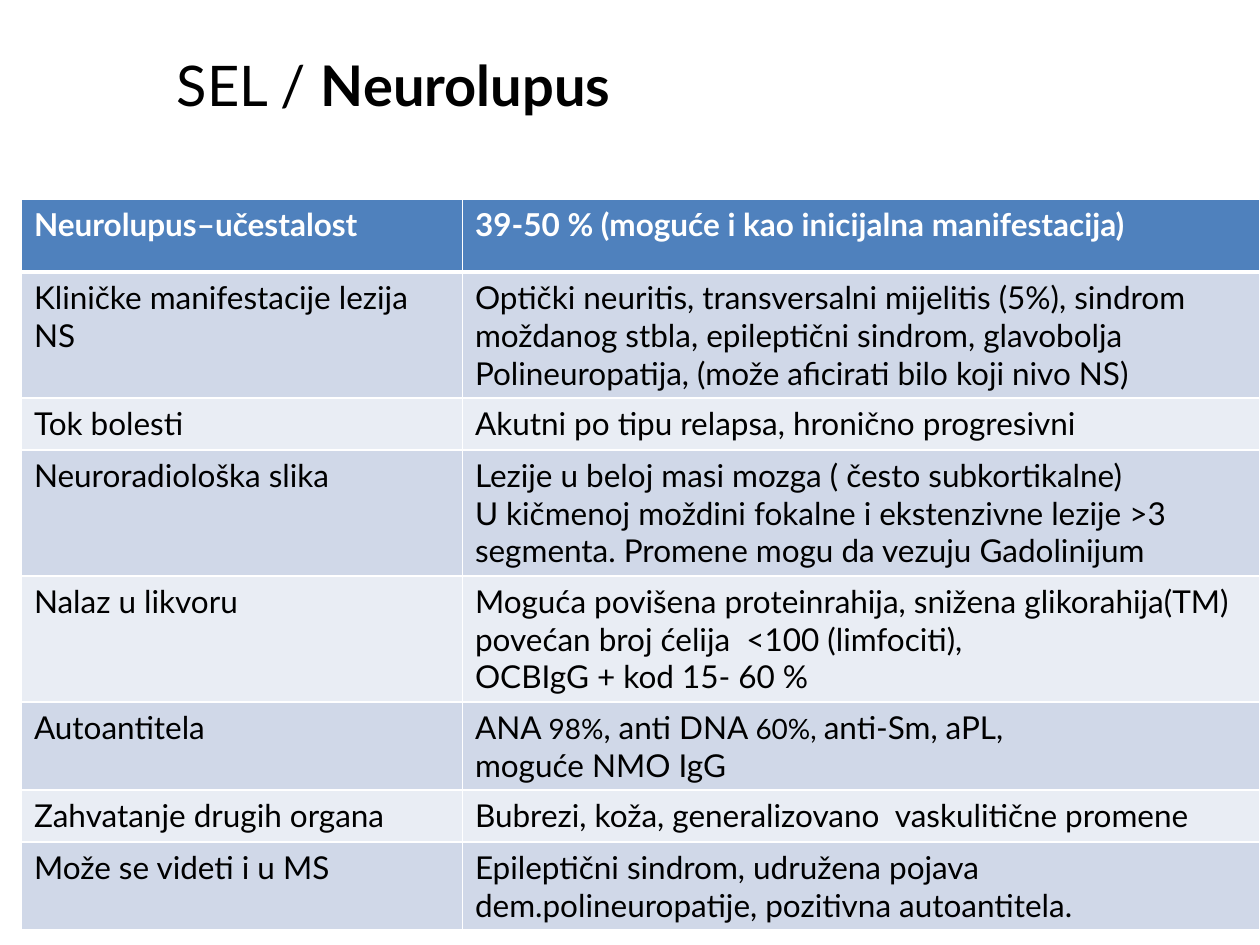
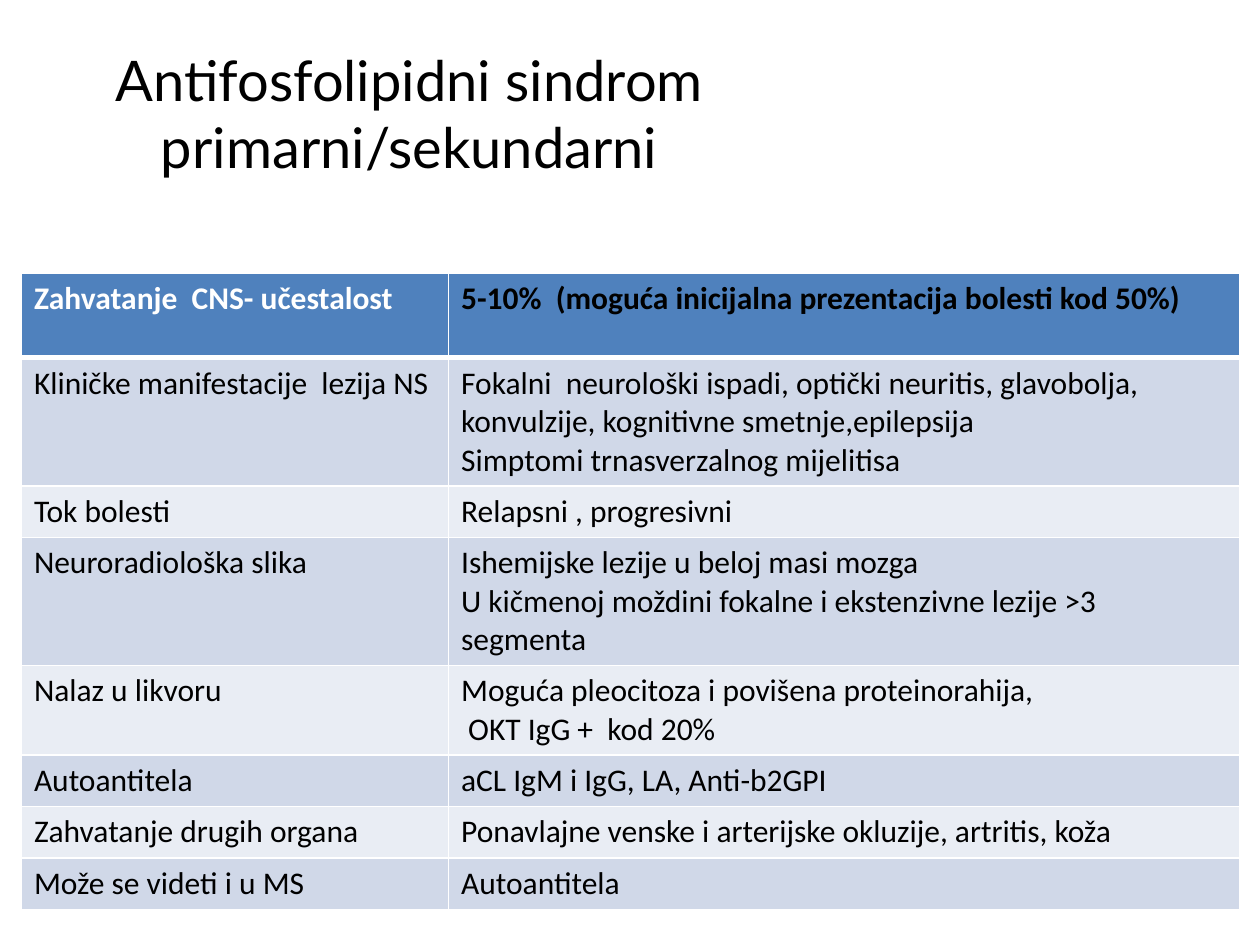
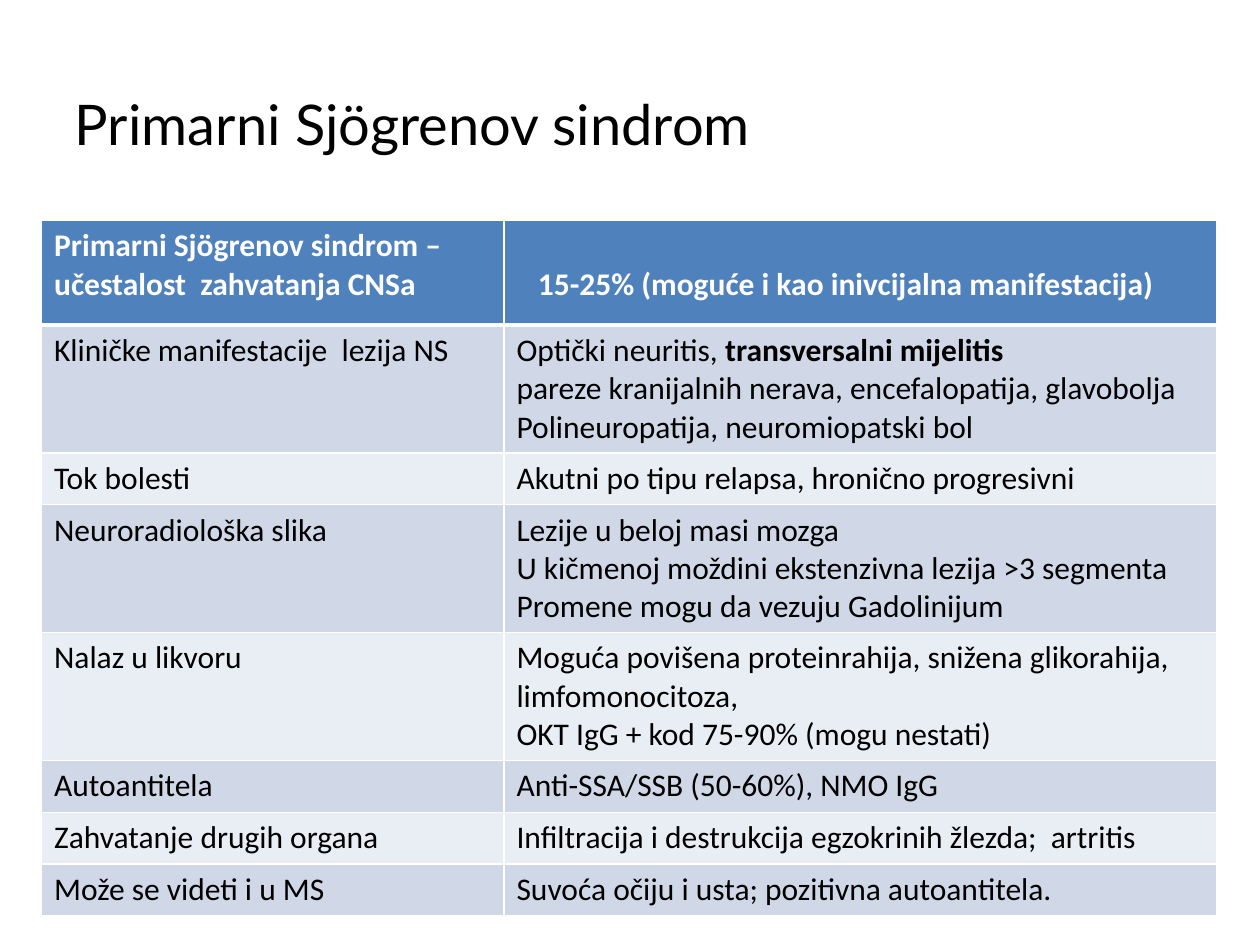
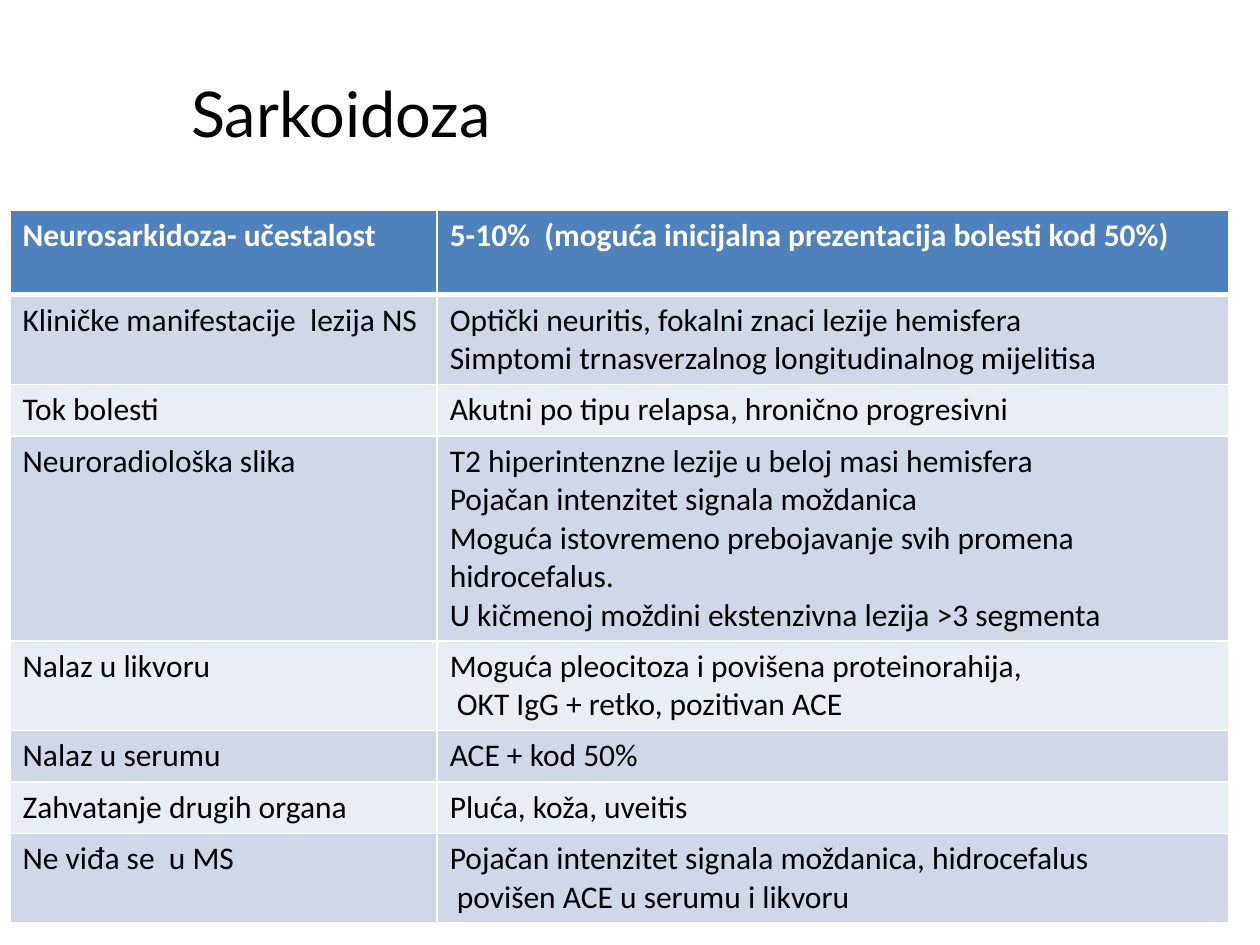
from lxml.etree import SubElement
from pptx import Presentation
from pptx.dml.color import RGBColor
from pptx.enum.text import MSO_ANCHOR, MSO_AUTO_SIZE, PP_ALIGN
from pptx.oxml.ns import qn
from pptx.util import Inches, Pt

COLORS = {
    "header": "4F81BD",
    "odd_row": "D0D8E8",
    "even_row": "E9EDF4",
    "border": "FFFFFF",
    "header_text": "FFFFFF",
    "text": "000000",
}
TITLE_FONT = "Lato"
TITLE_SIZE = 32
TABLE_SIZE = 18
ROW_HEIGHT = 0.41
THIN, THICK = 1, 3

SMALL = {"size": 16}
BOLD = {"bold": True}
BLACK = {"color": COLORS["text"]}

# A cell is a list of paragraphs, or one string; a paragraph is a list of runs,
# or one string; a run is a string, or a pair of string and format values.
SLIDES = [
    {
        "title": ["SEL / ", ("Neurolupus", BOLD)],
        "title_box": (0.5, 0.25, 5.25, 0.83),
        "table_box": (0.17, 1.58, 9.83, 5.79),
        "label_width": 3.5,
        "header_height": 0.58,
        "font": "Lato",
        "rows": [
            ("Neurolupus–učestalost", "39-50 % (moguće i kao inicijalna manifestacija)"),
            ("Kliničke manifestacije lezija NS", [
                "Optički neuritis, transversalni mijelitis (5%), sindrom moždanog stbla, "
                "epileptični sindrom, glavobolja",
                "Polineuropatija, (može aficirati bilo koji nivo NS)"]),
            ("Tok bolesti", "Akutni po tipu relapsa, hronično progresivni"),
            ("Neuroradiološka slika", [
                "Lezije u beloj masi mozga ( često subkortikalne)",
                "U kičmenoj moždini fokalne i ekstenzivne lezije >3 segmenta. "
                "Promene mogu da vezuju Gadolinijum"]),
            ("Nalaz u likvoru", [
                "Moguća povišena proteinrahija, snižena glikorahija(TM)",
                "povećan broj ćelija  <100 (limfociti),",
                "OCBIgG + kod 15- 60 %"]),
            ("Autoantitela", [
                ["ANA ", ("98%", SMALL), ", anti DNA ", ("60%, ", SMALL), "anti-Sm, aPL,"],
                "moguće NMO IgG"]),
            ("Zahvatanje drugih organa", "Bubrezi, koža, generalizovano  vaskulitične promene"),
            ("Može se videti i u MS",
             "Epileptični sindrom, udružena pojava dem.polineuropatije, pozitivna autoantitela."),
        ],
    },
    {
        "title": ["Antifosfolipidni sindrom\nprimarni/sekundarni"],
        "title_box": (0.25, 0.17, 6, 1.45),
        "table_box": (0.17, 2.17, 9.67, 4.99),
        "label_width": 3.39,
        "header_height": 0.67,
        "font": "Calibri",
        "rows": [
            ("Zahvatanje  CNS- učestalost",
             [[("5-10%  (moguća inicijalna prezentacija bolesti kod 50%)", BLACK)]]),
            ("Kliničke manifestacije  lezija NS", [
                "Fokalni  neurološki ispadi, optički neuritis, glavobolja, konvulzije, "
                "kognitivne smetnje,epilepsija",
                "Simptomi trnasverzalnog mijelitisa"]),
            ("Tok bolesti", "Relapsni , progresivni"),
            ("Neuroradiološka slika", [
                "Ishemijske lezije u beloj masi mozga",
                "U kičmenoj moždini fokalne i ekstenzivne lezije >3 segmenta"]),
            ("Nalaz u likvoru", [
                "Moguća pleocitoza i povišena proteinorahija,",
                " OKT IgG +  kod 20%"]),
            ("Autoantitela", "aCL IgM i IgG, LA, Anti-b2GPI"),
            ("Zahvatanje drugih organa", "Ponavlajne venske i arterijske okluzije, artritis, koža"),
            ("Može se videti i u MS", "Autoantitela"),
        ],
    },
    {
        "title": ["Primarni Sjögrenov sindrom"],
        "title_box": (0.08, 0.25, 6.39, 1.45),
        "table_box": (0.33, 1.75, 9.33, 5.46),
        "label_width": 3.67,
        "header_height": 0.83,
        "header_margins": {"margin_left": 0.27, "margin_top": 0.36},
        "font": "Calibri",
        "rows": [
            ("Primarni Sjögrenov sindrom –učestalost  zahvatanja CNSa",
             "15-25% (moguće i kao inivcijalna manifestacija)"),
            ("Kliničke manifestacije  lezija NS", [
                ["Optički neuritis, ", ("transversalni mijelitis", BOLD)],
                "pareze kranijalnih nerava, encefalopatija, glavobolja",
                "Polineuropatija, neuromiopatski bol"]),
            ("Tok bolesti", "Akutni po tipu relapsa, hronično progresivni"),
            ("Neuroradiološka slika", [
                "Lezije u beloj masi mozga",
                "U kičmenoj moždini ekstenzivna lezija >3 segmenta",
                "Promene mogu da vezuju Gadolinijum"]),
            ("Nalaz u likvoru", [
                "Moguća povišena proteinrahija, snižena glikorahija, limfomonocitoza,",
                "OKT IgG + kod 75-90% (mogu nestati)"]),
            ("Autoantitela", "Anti-SSA/SSB (50-60%), NMO IgG"),
            ("Zahvatanje drugih organa", "Infiltracija i destrukcija egzokrinih žlezda;  artritis"),
            ("Može se videti i u MS", "Suvoća očiju i usta; pozitivna autoantitela."),
        ],
    },
    {
        "title": [("Sarkoidoza", {"size": 36})],
        "title_box": (0.08, 0.17, 5.25, 1.45),
        "table_box": (0.08, 1.67, 9.67, 5.58),
        "label_width": 3.39,
        "header_height": 0.67,
        "font": "Calibri",
        "rows": [
            ("Neurosarkidoza- učestalost", "5-10%  (moguća inicijalna prezentacija bolesti kod 50%)"),
            ("Kliničke manifestacije  lezija NS", [
                "Optički neuritis, fokalni znaci lezije hemisfera",
                "Simptomi trnasverzalnog longitudinalnog mijelitisa"]),
            ("Tok bolesti", "Akutni po tipu relapsa, hronično progresivni"),
            ("Neuroradiološka slika", [
                "T2 hiperintenzne lezije u beloj masi hemisfera",
                "Pojačan intenzitet signala moždanica",
                "Moguća istovremeno prebojavanje svih promena",
                "hidrocefalus.",
                "U kičmenoj moždini ekstenzivna lezija >3 segmenta"]),
            ("Nalaz u likvoru", [
                "Moguća pleocitoza i povišena proteinorahija,",
                " OKT IgG + retko, pozitivan ACE"]),
            ("Nalaz u serumu", "ACE + kod 50%"),
            ("Zahvatanje drugih organa", "Pluća, koža, uveitis"),
            ("Ne viđa se  u MS", [
                "Pojačan intenzitet signala moždanica, hidrocefalus",
                " povišen ACE u serumu i likvoru"]),
        ],
    },
]


def as_list(value):
    return [value] if isinstance(value, str) else value


def add_runs(paragraph, runs, style):
    """Write runs in the style; a newline becomes a line break."""
    for run_content in as_list(runs):
        text, changes = (run_content, {}) if isinstance(run_content, str) else run_content
        values = {**style, **changes}
        for number, line in enumerate(text.split("\n")):
            if number:
                paragraph.add_line_break()
            run = paragraph.add_run()
            run.text = line
            run.font.size = Pt(values["size"])
            run.font.color.rgb = RGBColor.from_string(values["color"])
            for name in ("name", "bold"):
                setattr(run.font, name, values[name])


def set_borders(cell, top, bottom):
    properties = cell._tc.get_or_add_tcPr()
    for side, width in {"L": THIN, "R": THIN, "T": top, "B": bottom}.items():
        line = SubElement(properties, qn(f"a:ln{side}"), w=str(Pt(width)))
        fill = SubElement(line, qn("a:solidFill"))
        SubElement(fill, qn("a:srgbClr"), val=COLORS["border"])


def set_title_size(presentation):
    """Set the master title size, which line breaks follow too."""
    styles = presentation.slide_master.element.find(qn("p:txStyles"))
    level = styles.find(qn("p:titleStyle")).find(qn("a:lvl1pPr"))
    level.find(qn("a:defRPr")).set("sz", str(TITLE_SIZE * 100))


def add_title(slide, content):
    title = slide.shapes.title
    title.left, title.top, title.width, title.height = map(Inches, content["title_box"])
    frame = title.text_frame
    frame.word_wrap = True
    frame.auto_size = MSO_AUTO_SIZE.NONE
    frame.vertical_anchor = MSO_ANCHOR.MIDDLE
    paragraph = frame.paragraphs[0]
    paragraph.alignment = PP_ALIGN.CENTER
    style = {"name": TITLE_FONT, "size": TITLE_SIZE, "color": COLORS["text"], "bold": False}
    add_runs(paragraph, content["title"], style)


def fill_cell(cell, paragraphs, row_number, font):
    is_header = row_number == 0
    style = {
        "name": font,
        "size": TABLE_SIZE,
        "color": COLORS["header_text" if is_header else "text"],
        "bold": is_header,
    }
    set_borders(cell, THICK if row_number == 1 else THIN, THICK if is_header else THIN)
    fill_name = "header" if is_header else "odd_row" if row_number % 2 else "even_row"
    cell.fill.solid()
    cell.fill.fore_color.rgb = RGBColor.from_string(COLORS[fill_name])
    for number, runs in enumerate(as_list(paragraphs)):
        frame = cell.text_frame
        paragraph = frame.add_paragraph() if number else frame.paragraphs[0]
        add_runs(paragraph, runs, style)


def add_feature_table(slide, content):
    rows = content["rows"]
    left, top, width, height = content["table_box"]
    table_frame = slide.shapes.add_table(
        len(rows), 2, Inches(left), Inches(top), Inches(width), Inches(height))
    table = table_frame.table
    label_width = content["label_width"]
    table.columns[0].width = Inches(label_width)
    table.columns[1].width = Inches(width - label_width)
    for row_number, cells in enumerate(rows):
        row_height = ROW_HEIGHT if row_number else content["header_height"]
        table.rows[row_number].height = Inches(row_height)
        for column_number, paragraphs in enumerate(cells):
            fill_cell(table.cell(row_number, column_number), paragraphs,
                      row_number, content["font"])
    for name, margin in content.get("header_margins", {}).items():
        setattr(table.cell(0, 1), name, Inches(margin))
    table_frame.height = Inches(height)


def main():
    presentation = Presentation()
    presentation.slide_width = Inches(10)
    presentation.slide_height = Inches(7.5)
    set_title_size(presentation)
    title_only = presentation.slide_layouts.get_by_name("Title Only")
    for content in SLIDES:
        slide = presentation.slides.add_slide(title_only)
        add_title(slide, content)
        add_feature_table(slide, content)
    presentation.save("out.pptx")


if __name__ == "__main__":
    main()
